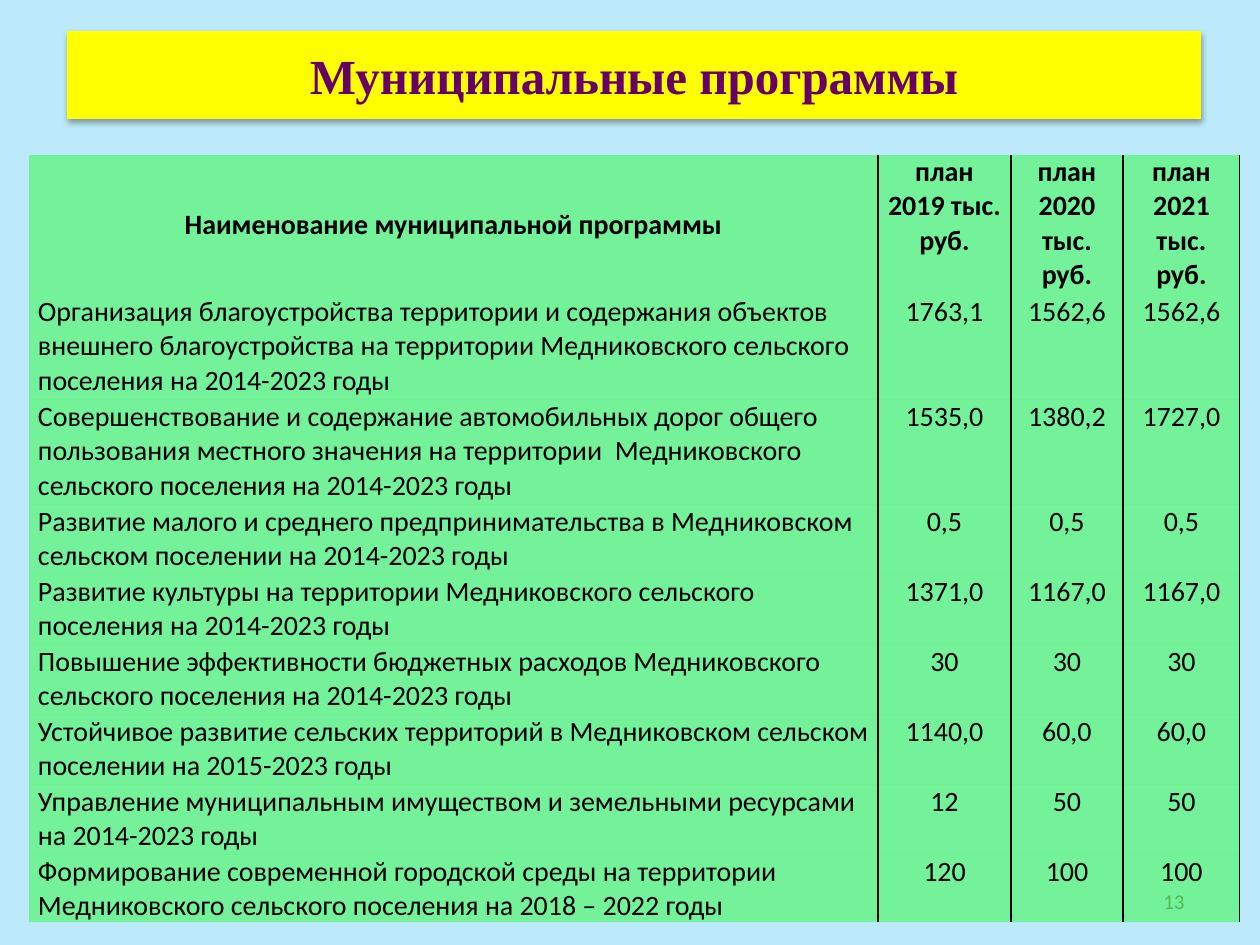
import dataclasses

import lxml.etree
import pptx
import pptx.dml.color
import pptx.enum.text
import pptx.oxml
import pptx.oxml.ns
import pptx.util

EMU_PER_PX = 914400 / 126
NO_STYLE = "{2D5ABB26-0587-4C30-8999-92F81FD0307C}"
CENTER = pptx.enum.text.PP_ALIGN.CENTER
LEFT = pptx.enum.text.PP_ALIGN.LEFT
RIGHT = pptx.enum.text.PP_ALIGN.RIGHT
MIDDLE = pptx.enum.text.MSO_ANCHOR.MIDDLE
TOP = pptx.enum.text.MSO_ANCHOR.TOP


@dataclasses.dataclass
class Program:
    name: str
    plans: tuple[str, str, str]
    height: int = 70


HEADER = Program(
    "Наименование муниципальной программы",
    ("план 2019 тыс. руб.", "план 2020 тыс. руб.", "план 2021 тыс. руб."), 140)
PROGRAMS = [
    Program("Организация благоустройства территории и содержания объектов внешнего "
            "благоустройства на территории Медниковского сельского поселения "
            "на 2014-2023 годы", ("1763,1", "1562,6", "1562,6"), 105),
    Program("Совершенствование и содержание автомобильных дорог общего пользования "
            "местного значения на территории  Медниковского сельского поселения "
            "на 2014-2023 годы", ("1535,0", "1380,2", "1727,0"), 105),
    Program("Развитие малого и среднего предпринимательства в Медниковском сельском "
            "поселении на 2014-2023 годы", ("0,5", "0,5", "0,5")),
    Program("Развитие культуры на территории Медниковского сельского поселения "
            "на 2014-2023 годы", ("1371,0", "1167,0", "1167,0")),
    Program("Повышение эффективности бюджетных расходов Медниковского сельского "
            "поселения на 2014-2023 годы", ("30", "30", "30")),
    Program("Устойчивое развитие сельских территорий в Медниковском сельском "
            "поселении на 2015-2023 годы", ("1140,0", "60,0", "60,0")),
    Program("Управление муниципальным имуществом и земельными ресурсами "
            "на 2014-2023 годы", ("12", "50", "50")),
    Program("Формирование современной городской среды на территории Медниковского "
            "сельского поселения на 2018 – 2022 годы", ("120", "100", "100"), 62),
]
COLUMN_WIDTHS = (849, 133, 112, 117)


def px(length: int) -> int:
    return round(length * EMU_PER_PX)


def color(value: str) -> pptx.dml.color.RGBColor:
    return pptx.dml.color.RGBColor.from_string(value)


def add_xml(parent, markup: str) -> None:
    """Append a DrawingML fragment to the parent element."""
    namespace = pptx.oxml.ns.nsdecls("a")
    parent.append(pptx.oxml.parse_xml(markup.replace(">", f" {namespace}>", 1)))


def write(frame, text: str, size: int, font_color: str, align,
          bold: bool = False, font_name: str = "Calibri") -> None:
    para = frame.paragraphs[0]
    para.text = text
    para.alignment = align
    para.font.name = font_name
    para.font.size = pptx.util.Pt(size)
    para.font.bold = bold
    para.font.color.rgb = color(font_color)


def format_cell(cell, column: int) -> None:
    """Vertical rules between columns and a see-through green fill."""
    cell.margin_left = cell.margin_right = px(9)
    cell.margin_top = cell.margin_bottom = 0
    properties = cell._tc.get_or_add_tcPr()
    for side in ("lnL", "lnR") if column else ("lnR",):
        add_xml(properties, f'<a:{side} w="9525"><a:solidFill><a:srgbClr val="000000"/>'
                            f'</a:solidFill></a:{side}>')
    add_xml(properties, '<a:solidFill><a:srgbClr val="00FF00"><a:alpha val="39000"/>'
                        '</a:srgbClr></a:solidFill>')


def add_program_table(page) -> None:
    rows = [HEADER, *PROGRAMS]
    frame = page.shapes.add_table(
        len(rows), len(COLUMN_WIDTHS), px(29), px(155),
        px(sum(COLUMN_WIDTHS)), px(sum(row.height for row in rows)))
    table = frame.table
    table.first_row = table.horz_banding = False
    table._tbl.tblPr.find(pptx.oxml.ns.qn("a:tableStyleId")).text = NO_STYLE
    for column, width in zip(table.columns, COLUMN_WIDTHS):
        column.width = px(width)
    for row_index, program in enumerate(rows):
        table.rows[row_index].height = px(program.height)
        is_header = program is HEADER
        for column_index, text in enumerate((program.name, *program.plans)):
            cell = table.cell(row_index, column_index)
            format_cell(cell, column_index)
            is_name = column_index == 0
            cell.vertical_anchor = MIDDLE if is_header and is_name else TOP
            align = LEFT if is_name and not is_header else CENTER
            write(cell.text_frame, text, 16, "000000", align, bold=is_header)


def add_page_number(page) -> None:
    box = page.shapes.add_textbox(px(903), px(876), px(294), px(50))
    box.text_frame.word_wrap = True
    box.text_frame.vertical_anchor = MIDDLE
    write(box.text_frame, "13", 12, "8C8C8C", RIGHT)


def format_title(page) -> None:
    title = page.shapes.title
    title.left, title.top, title.width, title.height = px(67), px(31), px(1134), px(88)
    title.fill.solid()
    title.fill.fore_color.rgb = color("FFFF00")
    title.text_frame.vertical_anchor = MIDDLE
    write(title.text_frame, "Муниципальные программы", 28, "660066", CENTER,
          bold=True, font_name="Times New Roman")
    add_xml(title._element.spPr,
            '<a:effectLst><a:outerShdw blurRad="39370" dist="22860" dir="5400000">'
            '<a:srgbClr val="000000"><a:alpha val="35000"/></a:srgbClr>'
            '</a:outerShdw></a:effectLst>')
    # The title lies in front of the other parts
    page.shapes._spTree.append(title._element)


def main() -> None:
    deck = pptx.Presentation()
    deck.slide_width, deck.slide_height = px(1260), px(945)
    page = deck.slides.add_slide(deck.slide_layouts[5])
    page.background.fill.solid()
    page.background.fill.fore_color.rgb = color("BDEAFB")
    # The number shows through the table, so it comes first
    add_page_number(page)
    add_program_table(page)
    format_title(page)
    deck.save("out.pptx")


if __name__ == "__main__":
    main()
